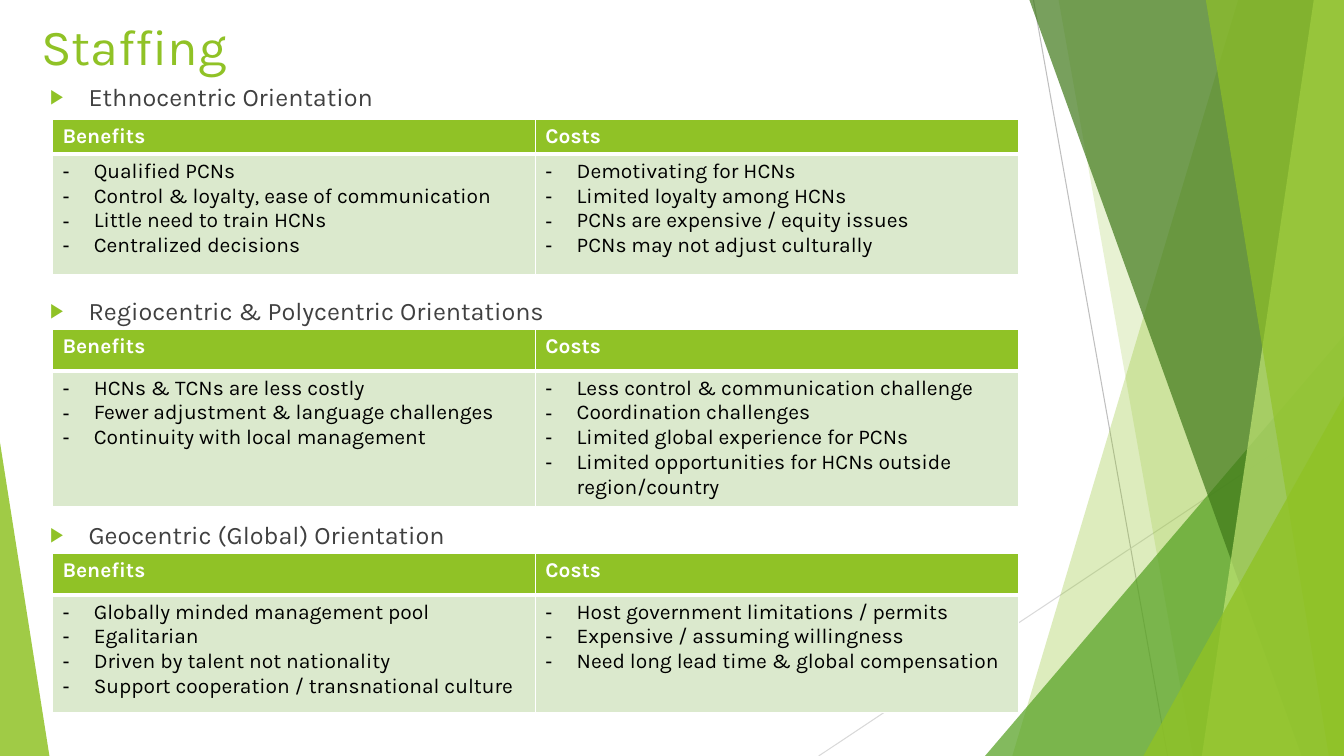
from lxml import etree
from pptx import Presentation
from pptx.dml.color import RGBColor
from pptx.enum import shapes, text
from pptx.oxml import ns
from pptx.util import Inches, Pt

FONT = "Karla"
WIDTH, HEIGHT = 13.33, 7.5
COLORS = {
    "green": "90C226", "leaf": "54A021", "forest": "3F7819", "lime": "C0E474",
    "pale": "DBE9CD", "gray": "404040", "black": "000000", "white": "FFFFFF",
    "line": "BFBFBF", "faint": "D9D9D9",
}
# Each band reaches the right edge: top left x, bottom left x, color, opacity.
BACK_BANDS = [(12.28, 10.04, "green", 30), (10.5, 11.83, "green", 20)]
FRONT_BANDS = [(10.21, 12.91, "forest", 70), (13.03, 11.92, "lime", 70),
               (11.96, 13.18, "green", 65)]
# heading, heading top, table top, row heights, benefits, costs
SECTIONS = [
    ("Ethnocentric Orientation", 0.76, 1.18, (0.34, 1.19),
     ["Qualified PCNs", "Control & loyalty, ease of communication",
      "Little need to train HCNs", "Centralized decisions"],
     ["Demotivating for HCNs", "Limited loyalty among HCNs",
      "PCNs are expensive / equity issues", "PCNs may not adjust culturally"]),
    ("Regiocentric & Polycentric Orientations", 2.88, 3.27, (0.41, 1.33),
     ["HCNs & TCNs are less costly", "Fewer adjustment & language challenges",
      "Continuity with local management"],
     ["Less control & communication challenge", "Coordination challenges",
      "Limited global experience for PCNs",
      "Limited opportunities for HCNs outside region/country"]),
    ("Geocentric (Global) Orientation", 5.1, 5.49, (0.41, 1.17),
     ["Globally minded management pool", "Egalitarian",
      "Driven by talent not nationality",
      "Support cooperation / transnational culture"],
     ["Host government limitations / permits", "Expensive / assuming willingness",
      "Need long lead time & global compensation"]),
]


def rgb(name):
    return RGBColor.from_string(COLORS[name])


def add_xml(parent, tag, **values):
    return etree.SubElement(parent, ns.qn(tag), values)


def write(para, words, color, size, bold=False):
    span = para.add_run()
    span.text = words
    for key, value in {"name": FONT, "size": Pt(size), "bold": bold}.items():
        setattr(span.font, key, value)
    span.font.color.rgb = rgb(color)


def add_bullet(para, mark, indent, color=None, percent=100):
    props = para._p.get_or_add_pPr()
    props.set("marL", str(Inches(indent)))
    props.set("indent", str(-Inches(indent)))
    if color:
        add_xml(add_xml(props, "a:buClr"), "a:srgbClr", val=COLORS[color])
    add_xml(props, "a:buSzPct", val=str(percent * 1000))
    add_xml(props, "a:buFont", typeface="Arial")
    add_xml(props, "a:buChar", char=mark)


def paint(shape, color, opacity):
    shape.shadow.inherit = False
    shape.fill.solid()
    shape.fill.fore_color.rgb = rgb(color)
    shape.line.fill.background()
    hue = shape._element.spPr.find(".//" + ns.qn("a:srgbClr"))
    add_xml(hue, "a:alpha", val=str(opacity * 1000))


def add_line(page, x1, y1, x2, y2, color):
    line = page.shapes.add_connector(
        shapes.MSO_CONNECTOR.STRAIGHT, *map(Inches, (x1, y1, x2, y2)))
    line.line.color.rgb = rgb(color)
    line.line.width = Pt(0.75)
    add_xml(line._element.spPr, "a:effectLst")


def add_band(page, top_x, bottom_x, color, opacity):
    builder = page.shapes.build_freeform(Inches(top_x), 0)
    corners = [(WIDTH, 0), (WIDTH, HEIGHT), (bottom_x, HEIGHT)]
    builder.add_line_segments([(Inches(x), Inches(y)) for x, y in corners])
    paint(builder.convert_to_shape(), color, opacity)


def add_triangle(page, left, top, width, apex, color, opacity):
    """Add a triangle that stands on the bottom edge of the slide."""
    shape = page.shapes.add_shape(
        shapes.MSO_SHAPE.ISOSCELES_TRIANGLE,
        *map(Inches, (left, top, width, HEIGHT - top)))
    shape.adjustments[0] = apex
    paint(shape, color, opacity)


def add_backdrop(page):
    add_line(page, 10.25, 0, 11.58, HEIGHT, "line")
    add_line(page, WIDTH, 4.03, 8.12, HEIGHT, "faint")
    for band in BACK_BANDS:
        add_band(page, *band)
    add_triangle(page, 9.77, 3.33, 3.56, 1, "leaf", 72)
    for band in FRONT_BANDS:
        add_band(page, *band)
    add_triangle(page, 11.34, 3.93, 1.99, 1, "green", 80)
    add_triangle(page, 0, 4.39, 0.49, 0, "green", 85)


def set_title(title, words):
    place = {"left": 0.31, "top": 0.1, "width": 9.4, "height": 1.44}
    for key, value in place.items():
        setattr(title, key, Inches(value))
    title.text_frame.vertical_anchor = text.MSO_ANCHOR.TOP
    para = title.text_frame.paragraphs[0]
    para.alignment = text.PP_ALIGN.LEFT
    write(para, words, "green", 36)


def add_heading(page, words, top):
    box = page.shapes.add_textbox(*map(Inches, (0.4, top, 9.4, 0.5)))
    box.text_frame.word_wrap = True
    para = box.text_frame.paragraphs[0]
    para.space_before = Pt(10)
    add_bullet(para, "▶", 0.38, "green", 80)
    write(para, words, "gray", 18)


def style_cell(cell, color, bottom):
    cell.fill.solid()
    cell.fill.fore_color.rgb = rgb(color)
    props = cell._tc.get_or_add_tcPr()
    for index, side in enumerate("LRTB"):
        width = bottom if side == "B" else 1
        edge = etree.Element(ns.qn("a:ln" + side), w=str(Pt(width)))
        add_xml(add_xml(edge, "a:solidFill"), "a:srgbClr", val=COLORS["white"])
        props.insert(index, edge)


def add_comparison(page, top, heights, benefits, costs):
    frame = page.shapes.add_table(
        2, 2, *map(Inches, (0.52, top, 9.58, sum(heights))))
    table = frame.table
    table.horz_banding = False
    for row, height in zip(table.rows, heights):
        row.height = Inches(height)
    columns = [("Benefits", benefits), ("Costs", costs)]
    for number, (label, items) in enumerate(columns):
        head, body = table.cell(0, number), table.cell(1, number)
        style_cell(head, "green", 3)
        style_cell(body, "pale", 1)
        write(head.text_frame.paragraphs[0], label, "white", 15, True)
        for index, item in enumerate(items):
            lines = body.text_frame
            para = lines.add_paragraph() if index else lines.paragraphs[0]
            add_bullet(para, "-", 0.31)
            write(para, item, "black", 15)


def main():
    deck = Presentation()
    deck.slide_width, deck.slide_height = Inches(WIDTH), Inches(HEIGHT)
    page = deck.slides.add_slide(deck.slide_layouts.get_by_name("Title Only"))
    add_backdrop(page)
    set_title(page.shapes.title, "Staffing")
    for heading, heading_top, *comparison in SECTIONS:
        add_heading(page, heading, heading_top)
        add_comparison(page, *comparison)
    deck.save("out.pptx")


if __name__ == "__main__":
    main()
